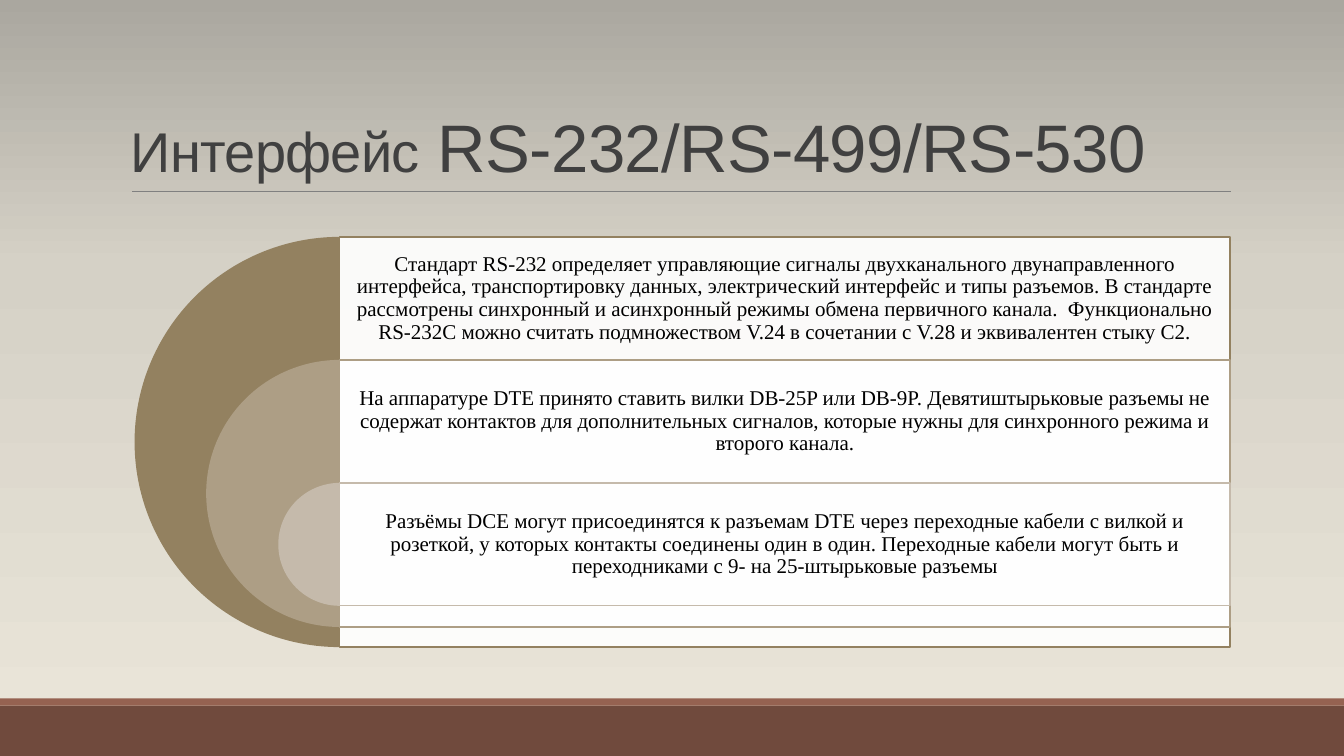
"""Build the slide about the RS-232/RS-499/RS-530 interface."""
from copy import deepcopy
from dataclasses import dataclass

from lxml import etree
from pptx import Presentation
from pptx.dml.color import RGBColor
from pptx.enum.shapes import MSO_CONNECTOR, MSO_SHAPE
from pptx.enum.text import MSO_ANCHOR, PP_ALIGN
from pptx.oxml.ns import qn
from pptx.util import Inches, Pt

RECT, PIE = MSO_SHAPE.RECTANGLE, MSO_SHAPE.PIE
STRAIGHT = MSO_CONNECTOR.STRAIGHT
MIDDLE, BOTTOM = MSO_ANCHOR.MIDDLE, MSO_ANCHOR.BOTTOM
LEFT, CENTER = PP_ALIGN.LEFT, PP_ALIGN.CENTER


@dataclass(frozen=True)
class Theme:
    """Colours, fonts and type sizes of the slide."""
    background: tuple = ((0, "EBE6DA"), (0.65, "D5D1C6"), (1, "AAA79F"))
    footer: str = "704A3D"
    footer_edge: str = "956251"
    rule: str = "808080"
    title: str = "404040"
    body: str = "000000"
    panel: str = "FFFFFF"
    levels: tuple = ("938160", "AD9E85", "C5BAAB")
    title_font: str = "Arial"
    body_font: str = "Times New Roman"
    title_small: int = 40
    title_large: int = 48
    body_size: int = 15


class SlideBuilder:
    """Draws styled elements on one slide."""

    def __init__(self, slide, theme):
        self.s = slide
        self.theme = theme

    def background(self):
        """Fill the background with the vertical theme gradient."""
        fill = self.s.background.fill
        fill.gradient()
        fill.gradient_angle = 90
        stop_list = self.s.element.find(".//" + qn("a:gsLst"))
        stop_list.append(deepcopy(stop_list[-1]))
        for stop, (position, color) in zip(fill.gradient_stops, self.theme.background):
            stop.position = position
            stop.color.rgb = RGBColor.from_string(color)

    def shape(self, kind, x, y, w, h, fill, line=None, opacity=100):
        """Add a filled preset shape."""
        sp = self.s.shapes.add_shape(kind, Inches(x), Inches(y), Inches(w), Inches(h))
        sp.shadow.inherit = False
        sp.fill.solid()
        sp.fill.fore_color.rgb = RGBColor.from_string(fill)
        if opacity < 100:
            color = sp.fill._xPr.find(".//" + qn("a:srgbClr"))
            etree.SubElement(color, qn("a:alpha"), val=str(opacity * 1000))
        if line:
            sp.line.color.rgb = RGBColor.from_string(line)
            sp.line.width = Pt(1)
        else:
            sp.line.fill.background()
        return sp

    def half_disc(self, center_x, y, diameter, fill):
        """Add the left half of a disc."""
        sp = self.shape(PIE, center_x - diameter / 2, y, diameter, diameter, fill)
        sp.adjustments[0], sp.adjustments[1] = 54, 162

    def rule(self, x1, x2, y):
        """Add a thin horizontal line."""
        line = self.s.shapes.add_connector(
            STRAIGHT, Inches(x1), Inches(y), Inches(x2), Inches(y))
        line.line.color.rgb = RGBColor.from_string(self.theme.rule)
        line.line.width = Pt(0.5)
        etree.SubElement(line._element.spPr, qn("a:effectLst"))

    def text(self, x, y, w, h, anchor, align, spacing, font, color, runs):
        """Add a wrapped one-paragraph text box and return it."""
        sp = self.s.shapes.add_textbox(Inches(x), Inches(y), Inches(w), Inches(h))
        tf = sp.text_frame
        tf.word_wrap = True
        tf.vertical_anchor = anchor
        p = tf.paragraphs[0]
        p.alignment = align
        p.line_spacing = spacing
        p.font.name = font
        p.font.color.rgb = RGBColor.from_string(color)
        if len(runs) == 1:
            p.font.size = Pt(runs[0][1])
        for words, size in runs:
            r = p.add_run()
            r.text = words
            if len(runs) > 1:
                r.font.size = Pt(size)
        return sp

    def title(self, x, y, w, h, runs):
        """Add the title with slightly tightened letters."""
        t = self.theme
        sp = self.text(x, y, w, h, BOTTOM, LEFT, 0.85, t.title_font, t.title, runs)
        for r in sp.text_frame.paragraphs[0].runs:
            r.font._element.set("spc", "-50")

    def body(self, x, y, w, h, words):
        """Add centred body text with narrow margins."""
        t = self.theme
        sp = self.text(x, y, w, h, MIDDLE, CENTER, 0.9, t.body_font, t.body,
                       [(words, t.body_size)])
        tf = sp.text_frame
        tf.margin_left = tf.margin_right = tf.margin_top = tf.margin_bottom = Inches(0.06)


STATEMENTS = (
    "Стандарт RS-232 определяет управляющие сигналы двухканального "
    "двунаправленного интерфейса, транспортировку данных, электрический "
    "интерфейс и типы разъемов. В стандарте рассмотрены синхронный и "
    "асинхронный режимы обмена первичного канала.  Функционально RS-232C "
    "можно считать подмножеством V.24 в сочетании с V.28 и эквивалентен "
    "стыку С2.",
    "На аппаратуре DTE принято ставить вилки DB-25P или DB-9P. "
    "Девятиштырьковые разъемы не содержат контактов для дополнительных "
    "сигналов, которые нужны для синхронного режима и второго канала.",
    "Разъёмы DCE могут присоединятся к разъемам DTE через переходные кабели "
    "с вилкой и розеткой, у которых контакты соединены один в один. "
    "Переходные кабели могут быть и переходниками с 9- на 25-штырьковые "
    "разъемы",
)
DIAMETERS = (4.07, 2.65, 1.22)
PANEL_X, PANEL_Y, PANEL_W, ROW_H = 3.37, 2.35, 8.83, 1.22


def main():
    """Build and save the presentation."""
    prs = Presentation()
    prs.slide_width, prs.slide_height = Inches(13.33), Inches(7.5)
    theme = Theme()
    b = SlideBuilder(prs.slides.add_slide(prs.slide_layouts[6]), theme)
    b.background()
    b.shape(RECT, 0, 7, 13.33, 0.5, theme.footer)
    b.shape(RECT, 0, 6.93, 13.33, 0.07, theme.footer_edge)
    b.rule(1.31, 12.21, 1.9)
    b.title(1.2, 0.31, 11, 1.59, [("Интерфейс", theme.title_small),
                                  (" RS-232/RS-499/RS-530", theme.title_large)])
    for i, (words, diameter, color) in enumerate(zip(STATEMENTS, DIAMETERS, theme.levels)):
        y = PANEL_Y + i * ROW_H
        b.half_disc(PANEL_X, y, diameter, color)
        b.shape(RECT, PANEL_X, y, PANEL_W, diameter, theme.panel, color, 90)
        b.body(PANEL_X, y, PANEL_W, ROW_H, words)
    prs.save("out.pptx")


if __name__ == "__main__":
    main()
